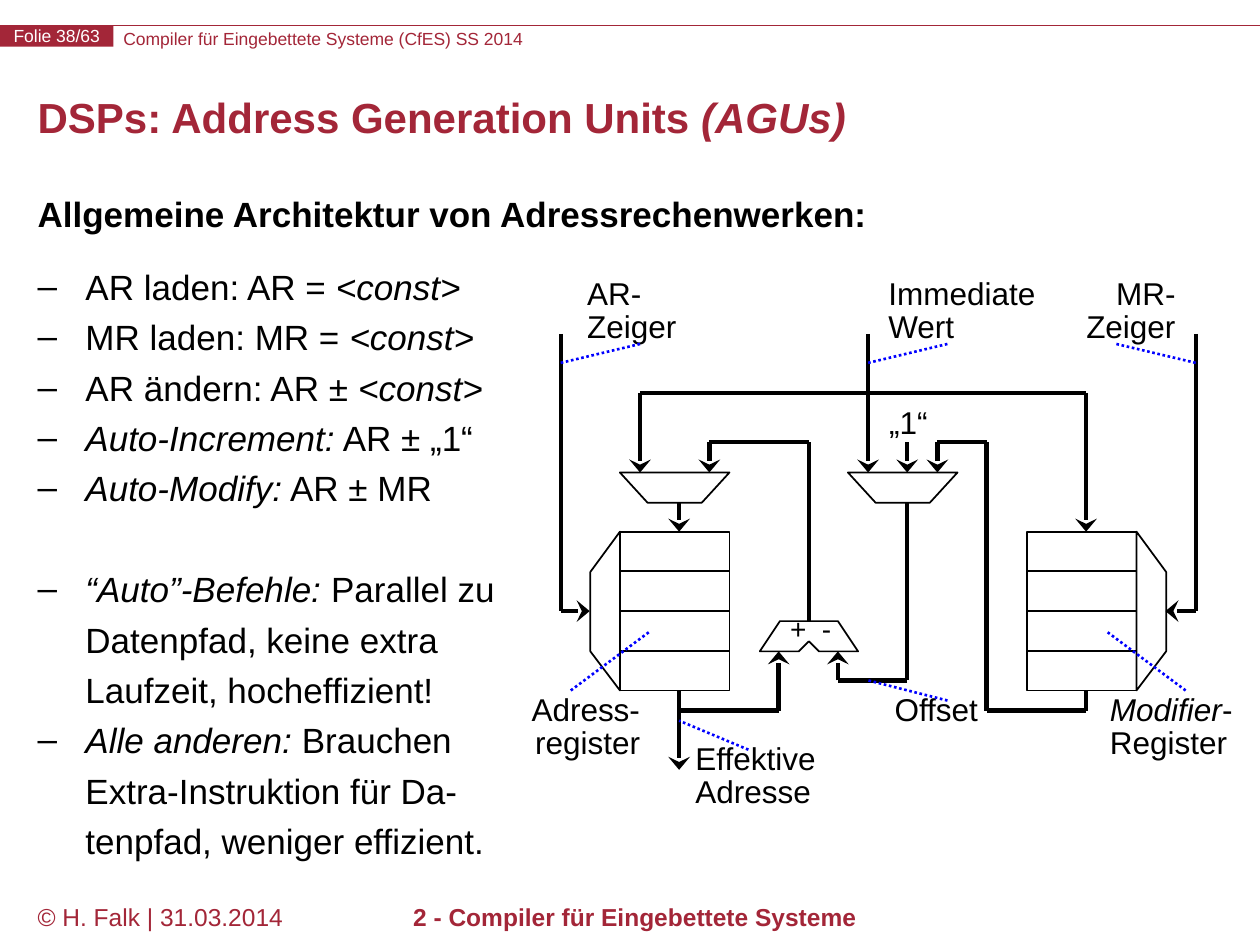
from dataclasses import dataclass
from lxml import etree
from pptx import Presentation
from pptx.dml.color import RGBColor
from pptx.enum.dml import MSO_LINE
from pptx.enum.shapes import MSO_CONNECTOR, MSO_SHAPE
from pptx.enum.text import MSO_ANCHOR, MSO_AUTO_SIZE, PP_ALIGN
from pptx.oxml.ns import qn
from pptx.util import Inches, Pt

LEFT, MID, RIGHT = PP_ALIGN.LEFT, PP_ALIGN.CENTER, PP_ALIGN.RIGHT
DOTS = MSO_LINE.ROUND_DOT
COLORS = {"red": "A32638", "black": "000000", "blue": "0000FF", "white": "FFFFFF"}
FONT = "Arial"
Point = tuple[float, float]
Run = tuple[str, bool]  # text, italic


@dataclass
class Label:
    box: tuple[float, float, float, float]
    lines: list[list[Run]]
    align: PP_ALIGN = LEFT
    size: float = 18
    pitch: float = 0.7


@dataclass
class Route:
    points: list[Point]
    arrow: bool = True


def color(name: str) -> RGBColor:
    return RGBColor.from_string(COLORS[name])


def add_run(para, text: str, size: float, tint: str = "black",
            bold: bool = False, italic: bool = False) -> None:
    run = para.add_run()
    run.text = text
    font = run.font
    font.name, font.size, font.bold, font.italic = FONT, Pt(size), bold, italic
    font.color.rgb = color(tint)


def indent(para, left: float, first: float) -> None:
    props = para._p.get_or_add_pPr()
    props.set("marL", str(Inches(left)))
    props.set("indent", str(Inches(first)))


def add_box(slide, box, inset: bool = True, wrap: bool = True):
    frame = slide.shapes.add_textbox(*map(Inches, box)).text_frame
    frame.word_wrap = wrap
    if not inset:
        clear_inset(frame)
    return frame


def clear_inset(frame) -> None:
    frame.margin_left = frame.margin_right = 0
    frame.margin_top = frame.margin_bottom = 0


def add_label(slide, label: Label) -> None:
    frame = add_box(slide, label.box, inset=False, wrap=False)
    frame.auto_size = MSO_AUTO_SIZE.SHAPE_TO_FIT_TEXT
    for row, runs in enumerate(label.lines):
        para = frame.add_paragraph() if row else frame.paragraphs[0]
        para.alignment = label.align
        para.line_spacing = label.pitch
        para.space_before = Pt(label.size * 0.2)
        indent(para, 0.71, -0.5)
        for text, italic in runs:
            add_run(para, text, label.size, italic=italic)


def add_line(slide, start: Point, end: Point, tint: str = "black",
             width: float = 2.5, arrow: bool = False, dash=None) -> None:
    wire = slide.shapes.add_connector(
        MSO_CONNECTOR.STRAIGHT, *map(Inches, (*start, *end)))
    wire.line.color.rgb = color(tint)
    wire.line.width = Pt(width)
    if dash:
        wire.line.dash_style = dash
    if arrow:
        etree.SubElement(wire.line._get_or_add_ln(), qn("a:tailEnd"),
                         type="stealth", w="lg", len="med")
    etree.SubElement(wire._element.spPr, qn("a:effectLst"))


def add_route(slide, route: Route) -> None:
    for start, end in zip(route.points, route.points[1:]):
        last = end == route.points[-1]
        add_line(slide, start, end, arrow=route.arrow and last)


def outline(shape) -> None:
    shape.shadow.inherit = False
    shape.fill.background()
    shape.line.color.rgb = color("black")
    shape.line.width = Pt(1)


def add_poly(slide, points: list[Point], close: bool = True) -> None:
    spots = [(Inches(x), Inches(y)) for x, y in points]
    build = slide.shapes.build_freeform(*spots[0])
    build.add_line_segments(spots[1:], close=close)
    outline(build.convert_to_shape())


def add_bank(slide, left: float, edge: float, side: int) -> None:
    """Four registers with a decoder on the given side."""
    for row in range(4):
        box = (left, 4.22 + row * 0.315, 0.87, 0.315)
        outline(slide.shapes.add_shape(MSO_SHAPE.RECTANGLE, *map(Inches, box)))
    tip = edge + side * 0.235
    add_poly(slide, [(edge, 4.22), (tip, 4.54), (tip, 5.17), (edge, 5.48)])


def add_mux(slide, x: float) -> None:
    add_poly(slide, [(x, 3.75), (x + 0.22, 3.99), (x + 0.65, 3.99), (x + 0.87, 3.75)])


BULLETS: list[list[Run]] = [
    [("AR laden: AR = ", False), ("<const>", True)],
    [("MR laden: MR = ", False), ("<const>", True)],
    [("AR ändern: AR ± ", False), ("<const>", True)],
    [("Auto-Increment:", True), (" AR ± „1“", False)],
    [("Auto-Modify:", True), (" AR ± MR", False)],
    [("“Auto”-Befehle:", True),
     (" Parallel zu Datenpfad, keine extra Laufzeit, hocheffizient!", False)],
    [("Alle anderen:", True),
     (" Brauchen Extra-Instruktion für Da-tenpfad, weniger effizient.", False)],
]
GAP_ROW = 5  # bullet that opens the second block

ROUTES = [
    Route([(4.45, 2.65), (4.45, 4.85), (4.68, 4.85)]),  # AR pointer
    Route([(9.49, 2.65), (9.49, 4.85), (9.25, 4.85)]),  # MR pointer
    Route([(6.89, 2.65), (6.89, 3.12)], False),  # immediate value
    Route([(6.89, 3.12), (6.89, 3.75)]),
    Route([(6.89, 3.12), (5.08, 3.12), (5.08, 3.75)]),
    Route([(6.89, 3.12), (8.62, 3.12), (8.62, 4.22)]),
    Route([(7.2, 3.51), (7.2, 3.75)]),  # constant one
    Route([(5.39, 3.99), (5.39, 4.22)]),  # into address registers
    Route([(5.39, 5.48), (5.39, 6.11)]),  # effective address
    Route([(5.39, 5.64), (6.18, 5.64), (6.18, 5.17)]),
    Route([(6.42, 4.93), (6.42, 3.51), (5.63, 3.51), (5.63, 3.75)]),  # sum
    Route([(7.2, 3.99), (7.2, 5.4), (6.65, 5.4), (6.65, 5.17)]),  # offset
    Route([(8.62, 5.48), (8.62, 5.64), (7.83, 5.64), (7.83, 3.51),
           (7.44, 3.51), (7.44, 3.75)]),  # modifier
]
LEADERS = [
    ((4.45, 2.88), (5.08, 2.73)), ((6.89, 2.88), (7.52, 2.73)),
    ((9.49, 2.88), (8.86, 2.73)), ((4.53, 5.48), (5.16, 5.01)),
    ((9.41, 5.48), (8.78, 5.01)), ((5.94, 5.95), (5.39, 5.72)),
    ((7.52, 5.56), (6.89, 5.4)),
]
LABELS = [
    Label((4.45, 2.26, 0.95, 0.48), [[("AR-", False)], [("Zeiger", False)]]),
    Label((6.84, 2.26, 1.42, 0.48), [[("Immediate", False)], [("Wert", False)]]),
    Label((8.38, 2.26, 0.95, 0.48), [[("MR-", False)], [("Zeiger", False)]], RIGHT),
    Label((3.97, 5.56, 1.11, 0.49), [[("Adress-", False)], [("register", False)]], RIGHT),
    Label((5.31, 5.95, 1.22, 0.48), [[("Effektive", False)], [("Adresse", False)]]),
    Label((6.89, 5.56, 0.91, 0.21), [[("Offset", False)]]),
    Label((8.6, 5.56, 1.23, 0.49),
          [[("Modifier", True), ("-", False)], [("Register", False)]]),
    Label((6.8, 3.2, 0.61, 0.3), [[("„1“", False)]], MID, pitch=1),
    Label((6.03, 4.85, 0.6, 0.27), [[("+  -", False)]], MID, 16, 1),
]


def add_frame(slide) -> None:
    # Header
    add_line(slide, (0, 0.2), (10, 0.2), "red", 0.75)
    head = add_box(slide, (0.98, 0.22, 6.6, 0.17), inset=False)
    add_run(head.paragraphs[0], "Compiler für Eingebettete Systeme (CfES) SS 2014", 10, "red")
    tag = slide.shapes.add_shape(MSO_SHAPE.RECTANGLE, *map(Inches, (0, 0.2, 0.9, 0.17)))
    tag.shadow.inherit = False
    tag.fill.solid()
    tag.fill.fore_color.rgb = color("red")
    tag.line.fill.background()
    clear_inset(tag.text_frame)
    tag.text_frame.word_wrap = False
    tag.text_frame.paragraphs[0].alignment = MID
    add_run(tag.text_frame.paragraphs[0], "Folie 38/63", 10, "white")
    # Footer
    foot = add_box(slide, (0.2, 7.11, 2.6, 0.5)).paragraphs[0]
    add_run(foot, "© H. Falk | 31.03.2014", 14, "red")
    foot = add_box(slide, (2.01, 7.11, 6.06, 0.5)).paragraphs[0]
    foot.alignment = MID
    add_run(foot, "2 - Compiler für Eingebettete Systeme", 14, "red", bold=True)


def add_words(slide) -> None:
    # Title and heading
    title = add_box(slide, (0.2, 0.6, 9.61, 0.72))
    title.vertical_anchor = MSO_ANCHOR.MIDDLE
    para = title.paragraphs[0]
    para.line_spacing = Pt(24)
    add_run(para, "DSPs: Address Generation Units ", 24, "red", bold=True)
    add_run(para, "(AGUs)", 24, "red", bold=True, italic=True)
    para = add_box(slide, (0.2, 1.52, 9.61, 0.5)).paragraphs[0]
    para.line_spacing = 0.9
    add_run(para, "Allgemeine Architektur von Adressrechenwerken:", 20, bold=True)
    # Bullets
    frame = add_box(slide, (0.2, 1.99, 3.86, 5.07))
    for row, runs in enumerate(BULLETS):
        para = frame.add_paragraph() if row else frame.paragraphs[0]
        para.line_spacing = 1.2
        if row == GAP_ROW:
            para.space_before = Pt(28.8)
        indent(para, 0.38, -0.38)
        props = para._p.get_or_add_pPr()
        etree.SubElement(props, qn("a:buFont"), typeface=FONT)
        etree.SubElement(props, qn("a:buChar"), char="–")
        for text, italic in runs:
            add_run(para, text, 20, italic=italic)


def add_plan(slide) -> None:
    # Register banks, multiplexers and the two halves of the adder
    add_bank(slide, 4.92, 4.92, -1)
    add_bank(slide, 8.15, 9.02, 1)
    add_mux(slide, 4.92)
    add_mux(slide, 6.73)
    for side in (-1, 1):
        add_poly(slide, [(6.42 + side * x, y) for x, y in (
            (0, 5.09), (0.08, 5.17), (0.39, 5.17), (0.23, 4.93), (0, 4.93))], close=False)
    # Wires, labels and leaders
    for route in ROUTES:
        add_route(slide, route)
    for label in LABELS:
        add_label(slide, label)
    for start, end in LEADERS:
        add_line(slide, start, end, "blue", 1.5, dash=DOTS)


def main() -> None:
    deck = Presentation()
    deck.slide_width, deck.slide_height = Inches(10), Inches(7.5)
    slide = deck.slides.add_slide(deck.slide_layouts[6])
    add_frame(slide)
    add_words(slide)
    add_plan(slide)
    deck.save("out.pptx")


if __name__ == "__main__":
    main()
